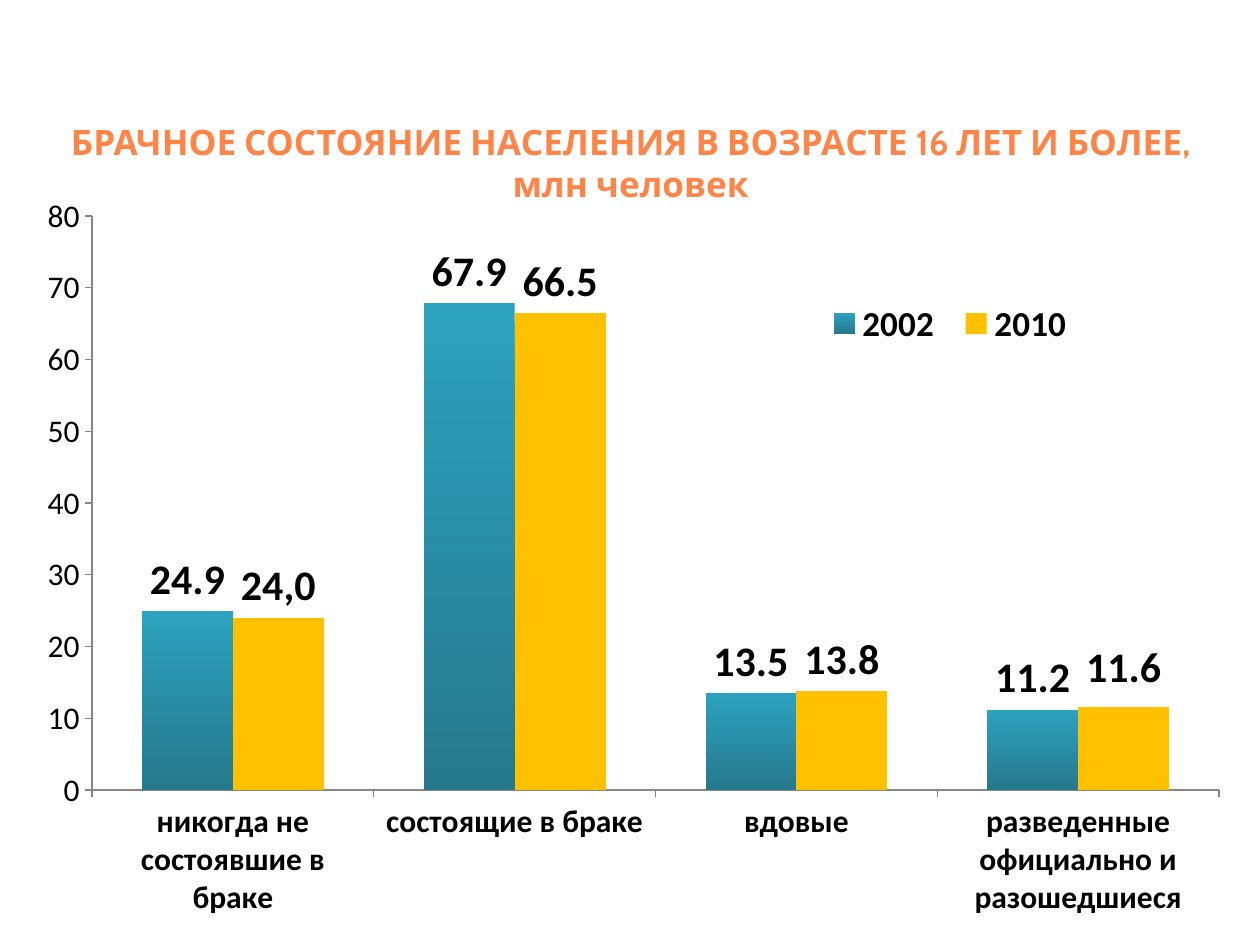
from pptx import Presentation
from pptx.chart.data import CategoryChartData as Data
from pptx.dml.color import RGBColor as RGB
from pptx.enum.chart import XL_CHART_TYPE as Kind
from pptx.enum.chart import XL_LABEL_POSITION as Spot
from pptx.enum.chart import XL_LEGEND_POSITION as Side
from pptx.enum.chart import XL_TICK_MARK as Tick
from pptx.enum.text import MSO_ANCHOR as Anchor
from pptx.enum.text import PP_ALIGN as Align
from pptx.oxml import parse_xml
from pptx.oxml.ns import nsdecls, qn
from pptx.util import Inches, Pt
from dataclasses import dataclass


@dataclass(frozen=True)
class Theme:
    head: str = "FF8447"
    ink: str = "000000"
    axis: str = "868686"
    teal: tuple = ("2DA2BF", "26788C")
    gold: str = "FFC000"
    title_font: str = "Cabin"
    chart_font: str = "Calibri"
    body: int = 18
    mid: int = 20
    big: int = 24


def style(font, size, face, color, bold=False):
    font.size, font.name, font.bold = Pt(size), face, bold
    font.color.rgb = RGB.from_string(color)


def write(frame, text, align=None, **form):
    for i, line in enumerate(text.split("\n")):
        para = frame.add_paragraph() if i else frame.paragraphs[0]
        if align is not None:
            para.alignment = align
        run = para.add_run()
        run.text = line
        style(run.font, **form)


def place(node, index, **parts):
    for old in node.findall(qn("c:layout")):
        node.remove(old)
    body = "".join(f'<c:{key} val="{val}"/>' for key, val in parts.items())
    node.insert(index, parse_xml(
        f'<c:layout {nsdecls("c")}><c:manualLayout>{body}'
        '</c:manualLayout></c:layout>'))


class Deck:
    """Holds the theme and the current slide."""

    def __init__(self, theme):
        self.theme = theme
        self.pres = Presentation()
        self.pres.slide_width, self.pres.slide_height = Inches(10), Inches(7.5)
        self.slide = self.pres.slides.add_slide(self.pres.slide_layouts[5])

    def title(self, text, *box):
        shape, look = self.slide.shapes.title, self.theme
        shape.left, shape.top, shape.width, shape.height = map(Inches, box)
        frame = shape.text_frame
        frame.word_wrap, frame.vertical_anchor = True, Anchor.TOP
        write(frame, text, align=Align.CENTER, size=look.mid,
              face=look.title_font, color=look.head, bold=True)

    def font(self, size, bold=True):
        look = self.theme
        return dict(size=size, face=look.chart_font, color=look.ink, bold=bold)

    def columns(self, names, rows, *box):
        look = self.theme
        data = Data()
        data.categories = names
        for name, vals in rows.items():
            data.add_series(name, vals)
        chart = self.slide.shapes.add_chart(
            Kind.COLUMN_CLUSTERED, *map(Inches, box), data).chart
        style(chart.font, **self.font(look.body, False))
        chart.has_title = False
        plot = chart.plots[0]
        plot.gap_width, plot.overlap, plot.vary_by_categories = 110, 0, False
        area = chart._chartSpace.chart.plotArea
        place(area, 0, layoutTarget="inner", xMode="edge", yMode="edge",
              x=0.058, y=0.026, w=0.909, h=0.767)
        self.axes(chart)
        self.legend(chart)
        for row in plot.series:
            self.labels(row)
        return plot.series

    def axes(self, chart):
        look = self.theme
        for axis, bold in ((chart.category_axis, True),
                           (chart.value_axis, False)):
            axis.has_major_gridlines = False
            axis.major_tick_mark = Tick.OUTSIDE
            axis.minor_tick_mark = Tick.NONE
            axis.format.line.color.rgb = RGB.from_string(look.axis)
            style(axis.tick_labels.font, **self.font(look.body, bold))
        scale = chart.value_axis
        scale.minimum_scale, scale.maximum_scale, scale.major_unit = 0, 80, 10

    def legend(self, chart):
        chart.has_legend = True
        key = chart.legend
        key.position, key.include_in_layout = Side.RIGHT, False
        style(key.font, **self.font(self.theme.mid))
        place(key._element, 1, xMode="edge", yMode="edge",
              x=0.64, y=0.12, w=0.22, h=0.1)

    def labels(self, row):
        tags = row.data_labels
        tags.show_value, tags.position = True, Spot.OUTSIDE_END
        tags.number_format, tags.number_format_is_linked = "General", False
        style(tags.font, **self.font(self.theme.big))

    def paint(self, row, color):
        fill = row.format.fill
        if isinstance(color, str):
            fill.solid()
            fill.fore_color.rgb = RGB.from_string(color)
            return
        fill.gradient()
        fill.gradient_angle = 270
        for stop, tone, pos in zip(fill.gradient_stops, color, (0, 1)):
            stop.color.rgb, stop.position = RGB.from_string(tone), pos

    def retext(self, row, index, text):
        tag = row.points[index].data_label
        write(tag.text_frame, text, **self.font(self.theme.big))
        tag.position = Spot.OUTSIDE_END

    def nudge(self, row, index, x, y):
        tag = row.points[index].data_label
        style(tag.font, **self.font(self.theme.big))
        tag.position = Spot.OUTSIDE_END
        for node in row._element.iter(qn("c:dLbl")):
            if node.find(qn("c:idx")).get("val") == str(index):
                place(node, 1, x=x, y=y)


def main():
    deck = Deck(Theme())
    deck.title("БРАЧНОЕ СОСТОЯНИЕ НАСЕЛЕНИЯ В ВОЗРАСТЕ 16 ЛЕТ И БОЛЕЕ,\n"
               "млн человек", 0.09, 0.91, 9.83, 0.84)
    names = ["никогда не состоявшие в браке", "состоящие в браке", "вдовые",
             "разведенные официально и разошедшиеся"]
    rows = {"2002": (24.9, 67.9, 13.5, 11.2), "2010": (24, 66.5, 13.8, 11.6)}
    old, new = deck.columns(names, rows, 0.16, 1.56, 9.84, 5.94)
    deck.paint(old, deck.theme.teal)
    deck.paint(new, deck.theme.gold)
    deck.retext(new, 0, "24,0")
    deck.nudge(new, 3, 0, -0.01)
    deck.pres.save("out.pptx")


if __name__ == "__main__":
    main()
